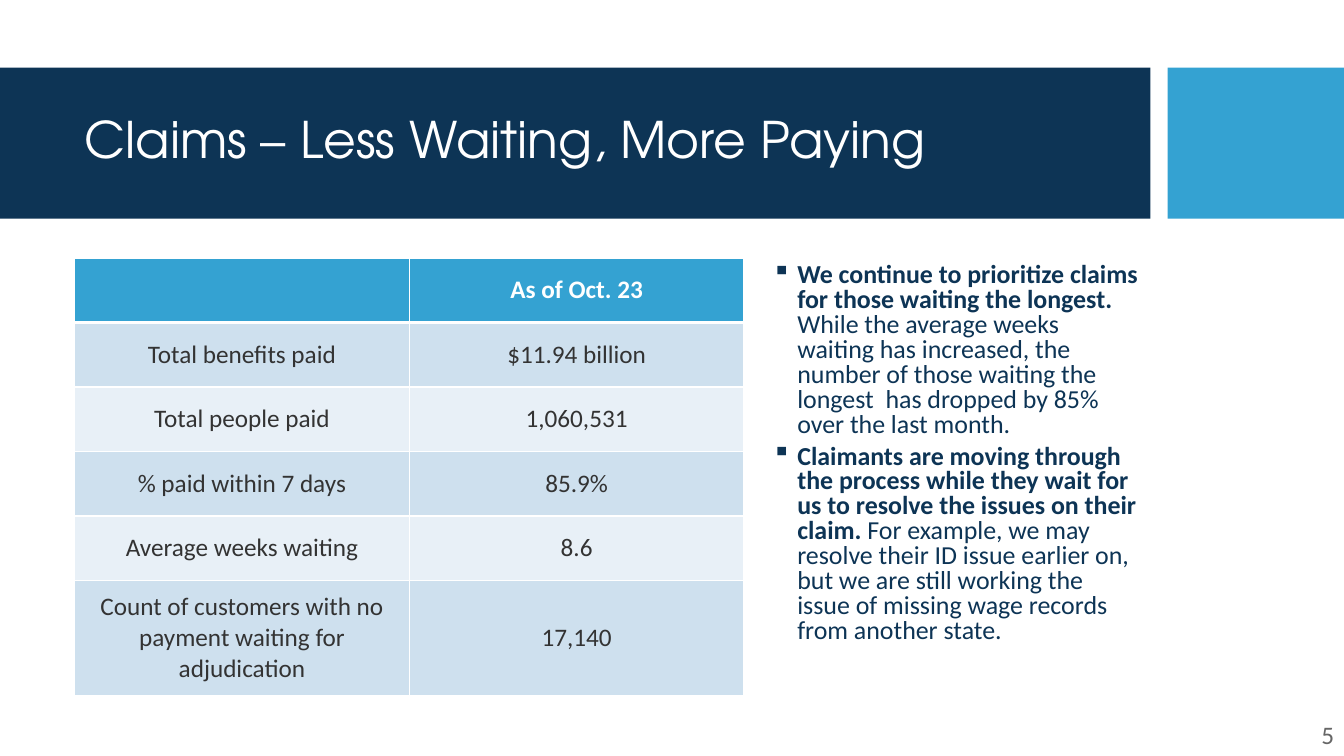
from lxml.etree import SubElement
from pptx import Presentation
from pptx.dml.color import RGBColor
from pptx.enum.shapes import MSO_SHAPE
from pptx.enum.text import MSO_ANCHOR as ANCHOR, PP_ALIGN as ALIGN
from pptx.oxml.ns import qn
from pptx.util import Inches, Pt

NAVY = RGBColor(0x0D, 0x34, 0x55)
SKY = RGBColor(0x34, 0xA2, 0xD2)
WHITE = RGBColor(0xFF, 0xFF, 0xFF)
CHARCOAL = RGBColor(0x33, 0x33, 0x33)
GRAY = RGBColor(0x66, 0x66, 0x66)
BANDS = (RGBColor(0xCE, 0xE0, 0xEE), RGBColor(0xE8, 0xF0, 0xF7))

TITLE_FONT = "TeX Gyre Adventor"
BODY_FONT = "Calibri"

CLAIMS = [
    ("", "As of Oct. 23"),
    ("Total benefits paid", "$11.94 billion"),
    ("Total people paid", "1,060,531"),
    ("% paid within 7 days", "85.9%"),
    ("Average weeks waiting", "8.6"),
    ("Count of customers with no payment waiting for adjudication", "17,140"),
]
POINTS = [
    ("We continue to prioritize claims for those waiting the longest.",
     " While the average weeks waiting has increased, the number of those "
     "waiting the longest  has dropped by 85% over the last month."),
    ("Claimants are moving through the process while they wait for us to "
     "resolve the issues on their claim.",
     " For example, we may resolve their ID issue earlier on, but we are still "
     "working the issue of missing wage records from another state."),
]


def style(font, size, color, name=BODY_FONT, bold=False):
    font.size, font.name, font.bold = Pt(size), name, bold
    font.color.rgb = color


def add_block(slide, left, top, width, height, color):
    block = slide.shapes.add_shape(
        MSO_SHAPE.RECTANGLE, Inches(left), Inches(top), Inches(width), Inches(height))
    block.shadow.inherit = False
    block.fill.solid()
    block.fill.fore_color.rgb = color
    block.line.fill.background()


def add_text(slide, left, top, width, height):
    frame = slide.shapes.add_textbox(
        Inches(left), Inches(top), Inches(width), Inches(height)).text_frame
    frame.word_wrap = True
    return frame


def add_banner(slide, left, top, width, height):
    accent_width, gap = 1.75, 0.17
    title_width = width - accent_width - gap
    add_block(slide, left, top, title_width, height, NAVY)
    add_block(slide, left + width - accent_width, top, accent_width, height, SKY)
    frame = add_text(slide, left + 0.74, top + 0.15, title_width - 0.9, 1.18)
    frame.vertical_anchor = ANCHOR.MIDDLE
    title = frame.paragraphs[0]
    title.text = "Claims – Less Waiting, More Paying"
    title.line_spacing = 0.9
    style(title.font, 36, WHITE, TITLE_FONT)


def add_borders(cell, top, bottom):
    properties = cell._tc.get_or_add_tcPr()
    for side, points in (("L", 1), ("R", 1), ("T", top), ("B", bottom)):
        line = SubElement(properties, qn(f"a:ln{side}"), w=str(Pt(points)))
        fill = SubElement(line, qn("a:solidFill"))
        SubElement(fill, qn("a:srgbClr"), val=str(WHITE))


def add_claims_table(slide, left, top, width, height):
    row_height = 0.64
    last_height = height - row_height * (len(CLAIMS) - 1)
    table = slide.shapes.add_table(
        len(CLAIMS), 2, Inches(left), Inches(top), Inches(width), Inches(height)).table
    for column in table.columns:
        column.width = Inches(width / 2)
    for r, entries in enumerate(CLAIMS):
        header = r == 0
        table.rows[r].height = Inches(last_height if r == len(CLAIMS) - 1 else row_height)
        for c, entry in enumerate(entries):
            cell = table.cell(r, c)
            add_borders(cell, 3 if r == 1 else 1, 3 if header else 1)
            cell.fill.solid()
            cell.fill.fore_color.rgb = SKY if header else BANDS[(r - 1) % 2]
            cell.vertical_anchor = ANCHOR.MIDDLE
            paragraph = cell.text_frame.paragraphs[0]
            paragraph.text = entry
            paragraph.alignment = ALIGN.CENTER
            style(paragraph.font, 18, WHITE if header else CHARCOAL, bold=header)


def add_points(slide, left, top, width, height):
    frame = add_text(slide, left, top, width, height)
    for i, (lead, detail) in enumerate(POINTS):
        point = frame.add_paragraph() if i else frame.paragraphs[0]
        properties = point._p.get_or_add_pPr()
        properties.set("marL", str(Inches(0.25)))
        properties.set("indent", str(Inches(-0.25)))
        SubElement(properties, qn("a:buChar"), char="▪")
        point.line_spacing = 0.8
        if i:
            point.space_before = Pt(5)
        style(point.font, 18.5, NAVY)
        for words, bold in ((lead, True), (detail, False)):
            run = point.add_run()
            run.text = words
            run.font.bold = bold


def add_page_number(slide, left, top, width, height):
    number = add_text(slide, left, top, width, height).paragraphs[0]
    number.text = "5"
    number.alignment = ALIGN.RIGHT
    style(number.font, 18, GRAY)


def main():
    deck = Presentation()
    deck.slide_width, deck.slide_height = Inches(13.33), Inches(7.5)
    slide = deck.slides.add_slide(deck.slide_layouts[6])
    add_banner(slide, 0, 0.67, 13.33, 1.5)
    add_claims_table(slide, 0.74, 2.56, 6.64, 4.34)
    add_page_number(slide, 12.62, 7.09, 0.71, 0.41)
    add_points(slide, 7.56, 2.57, 3.84, 4.35)
    deck.save("out.pptx")


if __name__ == "__main__":
    main()
